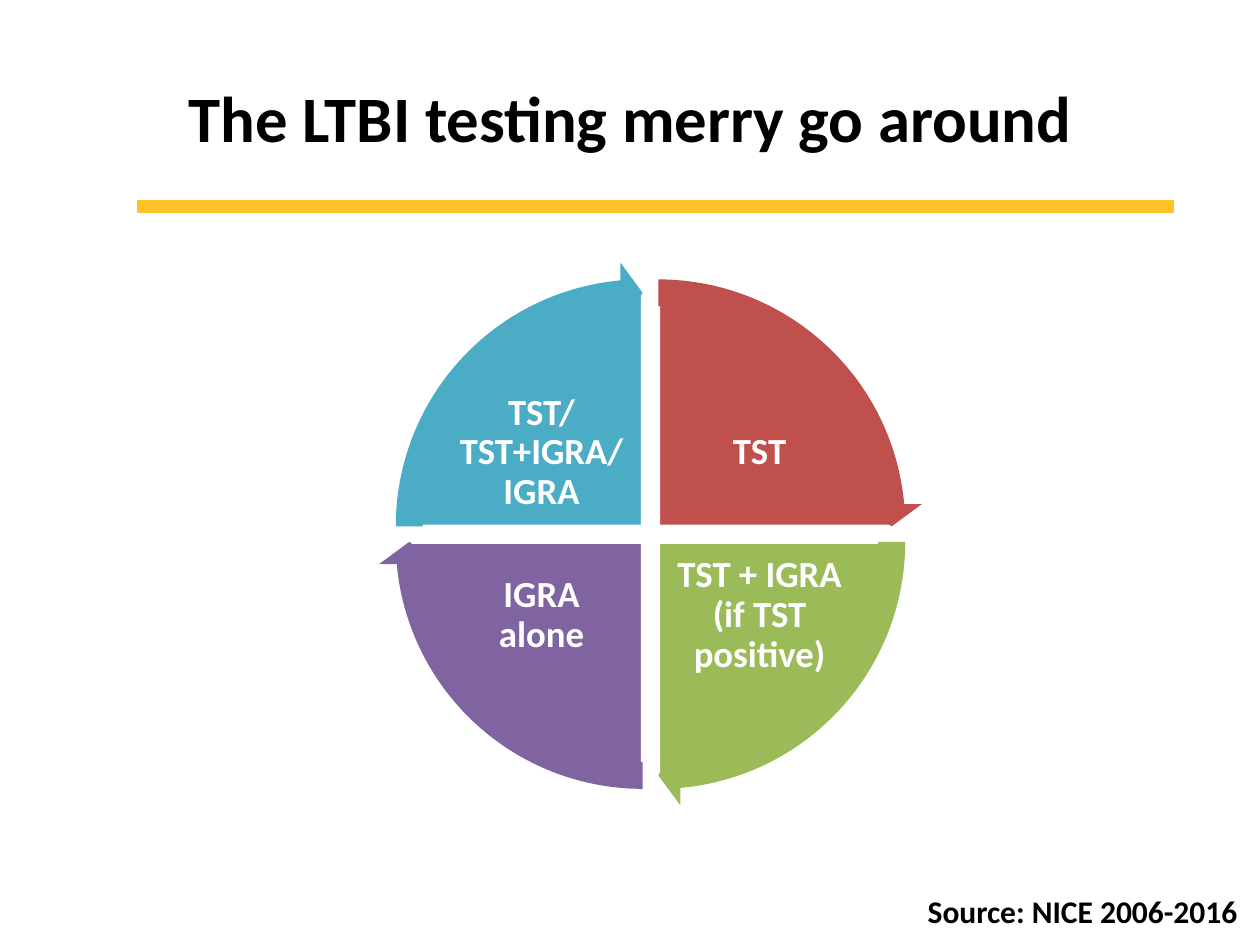
"""Build the LTBI testing cycle slide."""
from dataclasses import dataclass

from lxml.etree import SubElement
from pptx import Presentation
from pptx.dml.color import RGBColor
from pptx.enum.shapes import MSO_CONNECTOR, MSO_SHAPE
from pptx.enum.text import MSO_ANCHOR, MSO_AUTO_SIZE, PP_ALIGN
from pptx.oxml.ns import qn
from pptx.util import Pt

COLORS = {
    "black": "000000", "white": "FFFFFF", "gold": "FFC229",
    "red": "C0504D", "green": "9BBB59", "purple": "8064A2", "teal": "4BACC6",
}
FONT = "Calibri"
CENTER_X, CENTER_Y = 371.75, 305.25
GAP = 4.5
PIE_SIZE, ARROW_SIZE = 268.5, 302.4
LABEL_W, LABEL_H = 99.4, 73.4
LABEL_DX, LABEL_DY = 62.3, 46.4
FULL_TURN, QUARTER, SWEEP = 216, 54, 50.73


@dataclass
class Quadrant:
    label: str
    color: str
    side_x: int
    side_y: int
    start: float


QUADRANTS = [
    Quadrant("TST", "red", 1, -1, 3 * QUARTER),
    Quadrant("TST + IGRA (if TST positive)", "green", 1, 1, 0),
    Quadrant("IGRA alone", "purple", -1, 1, QUARTER),
    Quadrant("TST/ TST+IGRA/ IGRA", "teal", -1, -1, 2 * QUARTER),
]


def rgb(name: str) -> RGBColor:
    return RGBColor.from_string(COLORS[name])


def write(tf, text: str, size: float, color: str, align) -> None:
    p = tf.paragraphs[0]
    p.alignment = align
    r = p.add_run()
    r.text = text
    r.font.name = FONT
    r.font.size = Pt(size)
    r.font.bold = True
    r.font.color.rgb = rgb(color)


def add_round(s, kind, q: Quadrant, size: float, adjustments: list):
    left = CENTER_X + q.side_x * GAP - size / 2
    top = CENTER_Y + q.side_y * GAP - size / 2
    sp = s.shapes.add_shape(kind, Pt(left), Pt(top), Pt(size), Pt(size))
    sp.shadow.inherit = False
    for i, value in enumerate(adjustments):
        sp.adjustments[i] = value
    sp.fill.solid()
    sp.fill.fore_color.rgb = rgb(q.color)
    return sp


def add_wedge(s, q: Quadrant) -> None:
    end = (q.start + QUARTER) % FULL_TURN
    sp = add_round(s, MSO_SHAPE.PIE, q, PIE_SIZE, [q.start, end])
    sp.line.color.rgb = rgb("white")
    sp.line.width = Pt(2)


def add_label(s, q: Quadrant) -> None:
    left = CENTER_X + q.side_x * LABEL_DX - LABEL_W / 2
    top = CENTER_Y + q.side_y * LABEL_DY - LABEL_H / 2
    tf = s.shapes.add_textbox(Pt(left), Pt(top), Pt(LABEL_W), Pt(LABEL_H)).text_frame
    tf.word_wrap = True
    tf.vertical_anchor = MSO_ANCHOR.MIDDLE
    tf.margin_left = tf.margin_right = tf.margin_top = tf.margin_bottom = Pt(2.1)
    write(tf, q.label, 21, "white", PP_ALIGN.CENTER)
    tf.paragraphs[0].line_spacing = 0.9


def add_arrow(s, q: Quadrant) -> None:
    sp = add_round(s, MSO_SHAPE.CIRCULAR_ARROW, q, ARROW_SIZE,
                   [0.051, 3.28, q.start + SWEEP, q.start, 0.059])
    sp.line.fill.background()


def add_rule(s) -> None:
    line = s.shapes.add_connector(MSO_CONNECTOR.STRAIGHT, Pt(78.5), Pt(118), Pt(671), Pt(118))
    line.line.color.rgb = rgb("gold")
    line.line.width = Pt(7.25)
    SubElement(line._element.spPr, qn("a:effectLst"))


def add_title(s) -> None:
    title = s.shapes.title
    title.left, title.top, title.width, title.height = Pt(36), Pt(21.6), Pt(648), Pt(90)
    title.text_frame.vertical_anchor = MSO_ANCHOR.MIDDLE
    write(title.text_frame, "The LTBI testing merry go around", 37, "black", PP_ALIGN.CENTER)


def add_source(s) -> None:
    tf = s.shapes.add_textbox(Pt(455.8), Pt(506.2), Pt(258.5), Pt(28.8)).text_frame
    tf.word_wrap = True
    tf.auto_size = MSO_AUTO_SIZE.SHAPE_TO_FIT_TEXT
    write(tf, "Source: NICE 2006-2016", 18, "black", PP_ALIGN.RIGHT)


def main() -> None:
    prs = Presentation()
    prs.slide_width, prs.slide_height = Pt(720), Pt(540)
    s = prs.slides.add_slide(prs.slide_layouts[5])
    add_rule(s)
    add_title(s)
    add_source(s)
    for q in QUADRANTS:
        add_wedge(s, q)
        add_label(s, q)
    for q in QUADRANTS:
        add_arrow(s, q)
    prs.save("out.pptx")


if __name__ == "__main__":
    main()
